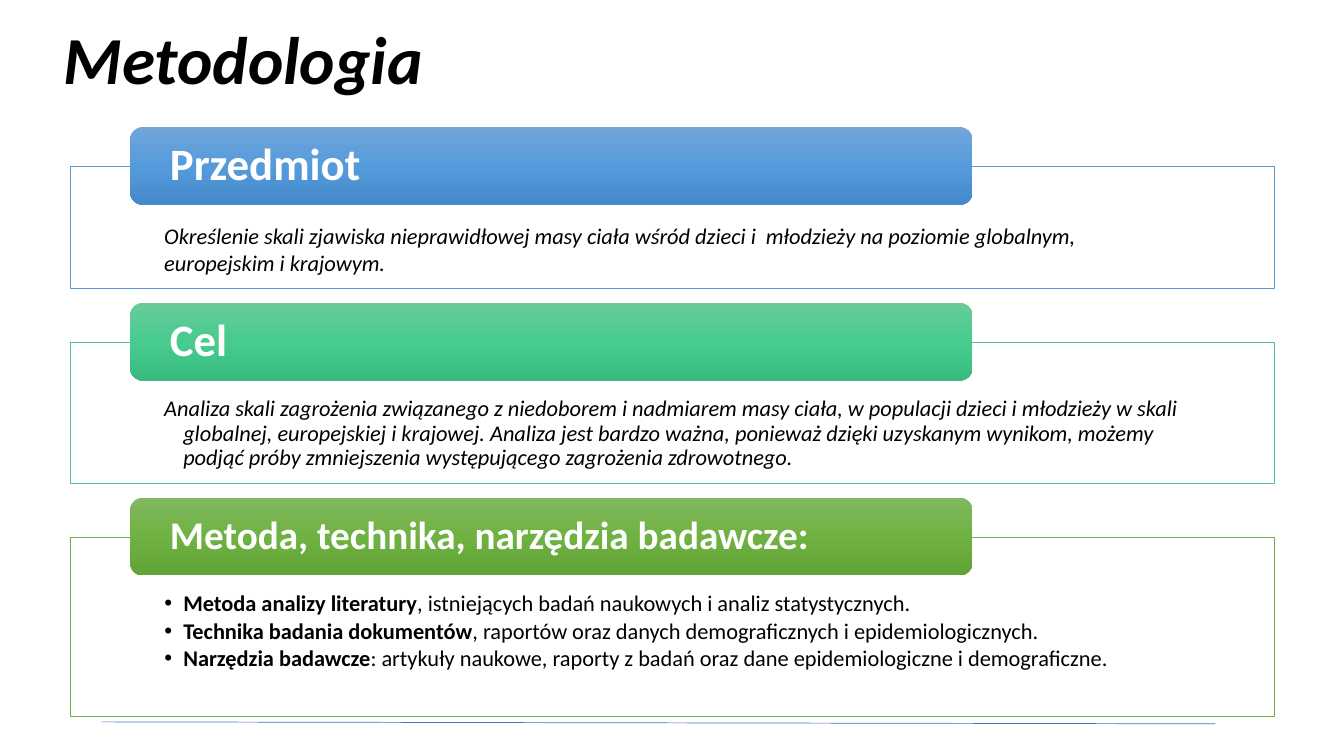
from copy import deepcopy

from lxml import etree
from pptx import Presentation
from pptx import util as u
from pptx.dml.color import RGBColor
from pptx.enum import shapes, text
from pptx.oxml.ns import qn

COLORS = {
    "text": "000000", "white": "FFFFFF", "rule": "4472C4",
    "blue": "5B9BD5", "green": "4DC58D", "olive": "70AD47",
}
GRADIENTS = {
    "blue": ("71A6DB", "559BDB", "448ACA"),
    "green": ("67CC9A", "47CB8E", "39BB7F"),
    "olive": ("81B861", "6FB242", "62A336"),
}
PANEL_LEFT, PANEL_WIDTH, PANEL_GAP = 1.78, 30.33, 1.35
HEADER_LEFT, HEADER_WIDTH, HEADER_HEIGHT, HEADER_RISE = 3.28, 21.23, 1.96, 0.99
HANGING = 0.48

SECTIONS = [
    dict(title="Przedmiot", color="blue", height=3.08, size=32, spacing=1.0,
         lines=[[("Określenie skali zjawiska nieprawidłowej masy ciała wśród dzieci i  młodzieży "
                  "na poziomie globalnym, europejskim i krajowym.", {"italic": True})]]),
    dict(title="Cel", color="green", height=3.56, size=32, spacing=0.9, indent=HANGING,
         lines=[[("Analiza skali zagrożenia związanego z niedoborem i nadmiarem masy ciała, "
                  "w populacji dzieci i młodzieży w skali globalnej, europejskiej i krajowej. "
                  "Analiza jest bardzo ważna, ponieważ dzięki uzyskanym wynikom, możemy podjąć "
                  "próby zmniejszenia występującego zagrożenia zdrowotnego.", {"italic": True})]]),
    dict(title="Metoda, technika, narzędzia badawcze:", color="olive", height=4.52, size=28,
         spacing=0.9, indent=HANGING, bullet="•",
         lines=[[("Metoda analizy literatury", {"bold": True}),
                 (", istniejących badań naukowych i analiz statystycznych.", {})],
                [("Technika badania dokumentów", {"bold": True}),
                 (", raportów oraz danych demograficznych i epidemiologicznych.", {})],
                [("Narzędzia badawcze", {"bold": True}),
                 (": artykuły naukowe, raporty z badań oraz dane epidemiologiczne "
                  "i demograficzne.", {})]]),
]


def rgb(name):
    return RGBColor.from_string(COLORS[name])


def apply(obj, values):
    for name, value in values.items():
        setattr(obj, name, value)


class Deck:
    def __init__(self, prs, font="Calibri"):
        self.font = font
        self.s = prs.slides.add_slide(prs.slide_layouts[1])

    def place(self, sp, left, top, width, height):
        apply(sp, dict(left=u.Cm(left), top=u.Cm(top), width=u.Cm(width), height=u.Cm(height)))

    def shape(self, kind, *box):
        sp = self.s.shapes.add_shape(kind, *map(u.Cm, box))
        sp.shadow.inherit = False
        return sp

    def frame(self, sp, anchor, insets=(0.25, 0.13, 0.25, 0.13)):
        """Set wrapping, anchor and insets (left, top, right, bottom) in cm."""
        sides = ("margin_left", "margin_top", "margin_right", "margin_bottom")
        apply(sp.text_frame, dict(zip(sides, map(u.Cm, insets)), word_wrap=True,
                                  auto_size=text.MSO_AUTO_SIZE.NONE, vertical_anchor=anchor))

    def paragraph(self, p, runs, size, color="text", spacing=0.9, after=0, indent=0, bullet=None):
        pPr = p._p.get_or_add_pPr()
        pPr.set("marL", str(u.Cm(indent)))
        pPr.set("indent", str(-u.Cm(indent)))
        if bullet:
            etree.SubElement(pPr, qn("a:buChar"), char=bullet)
        else:
            etree.SubElement(pPr, qn("a:buNone"))
        apply(p, dict(alignment=text.PP_ALIGN.LEFT, line_spacing=spacing,
                      space_before=u.Pt(0), space_after=u.Pt(after)))
        for words, style in runs:
            r = p.add_run()
            r.text = words
            apply(r.font, {"name": self.font, "size": u.Pt(size), "bold": False,
                           "italic": False, **style})
            r.font.color.rgb = rgb(color)

    def title(self, words):
        sp = self.s.shapes.title
        self.place(sp, 1.35, 0, 17.15, 3.18)
        self.frame(sp, text.MSO_ANCHOR.MIDDLE)
        self.paragraph(sp.text_frame.paragraphs[0], [(words, {"bold": True, "italic": True})], 48)

    def panel(self, top, section):
        """Draw an outlined text panel; a bulleted one uses the body placeholder."""
        box = (PANEL_LEFT, top, PANEL_WIDTH, section["height"])
        bullet = section.get("bullet")
        if bullet:
            sp = self.s.placeholders[1]
            self.place(sp, *box)
        else:
            sp = self.shape(shapes.MSO_SHAPE.RECTANGLE, *box)
        sp.fill.solid()
        sp.fill.fore_color.rgb = rgb("white")
        sp.line.color.rgb = rgb(section["color"])
        sp.line.width = u.Pt(0.5)
        self.frame(sp, text.MSO_ANCHOR.TOP, (2.36, 1.4, 2.36, 0.3))
        tf = sp.text_frame
        for i, runs in enumerate(section["lines"]):
            p = tf.add_paragraph() if i else tf.paragraphs[0]
            self.paragraph(p, runs, 16, spacing=section["spacing"], after=2.4,
                           indent=section.get("indent", 0), bullet=bullet)

    def header(self, top, section):
        sp = self.shape(shapes.MSO_SHAPE.ROUNDED_RECTANGLE,
                        HEADER_LEFT, top, HEADER_WIDTH, HEADER_HEIGHT)
        sp.line.fill.background()
        sp.fill.gradient()
        sp.fill.gradient_angle = 270
        first = sp._element.spPr.find(".//" + qn("a:gs"))
        first.addnext(deepcopy(first))
        for i, (stop, color) in enumerate(zip(sp.fill.gradient_stops,
                                              GRADIENTS[section["color"]])):
            stop.position = i / 2
            stop.color.rgb = RGBColor.from_string(color)
        self.frame(sp, text.MSO_ANCHOR.MIDDLE, (0.91, 0, 0.91, 0))
        self.paragraph(sp.text_frame.paragraphs[0], [(section["title"], {"bold": True})],
                       section["size"], "white")

    def rule(self, *ends):
        line = self.s.shapes.add_connector(shapes.MSO_CONNECTOR.STRAIGHT, *map(u.Cm, ends))
        line.line.color.rgb = rgb("rule")
        line.line.width = u.Pt(0.5)
        etree.SubElement(line._element.spPr, qn("a:effectLst"))


def main():
    prs = Presentation()
    prs.slide_width, prs.slide_height = u.Cm(33.87), u.Cm(19.05)
    deck = Deck(prs)
    deck.title("Metodologia")
    top = 4.19
    for section in SECTIONS:
        deck.panel(top, section)
        deck.header(top - HEADER_RISE, section)
        top += section["height"] + PANEL_GAP
    deck.rule(2.57, 18.19, 30.63, 18.24)
    prs.save("out.pptx")


if __name__ == "__main__":
    main()
